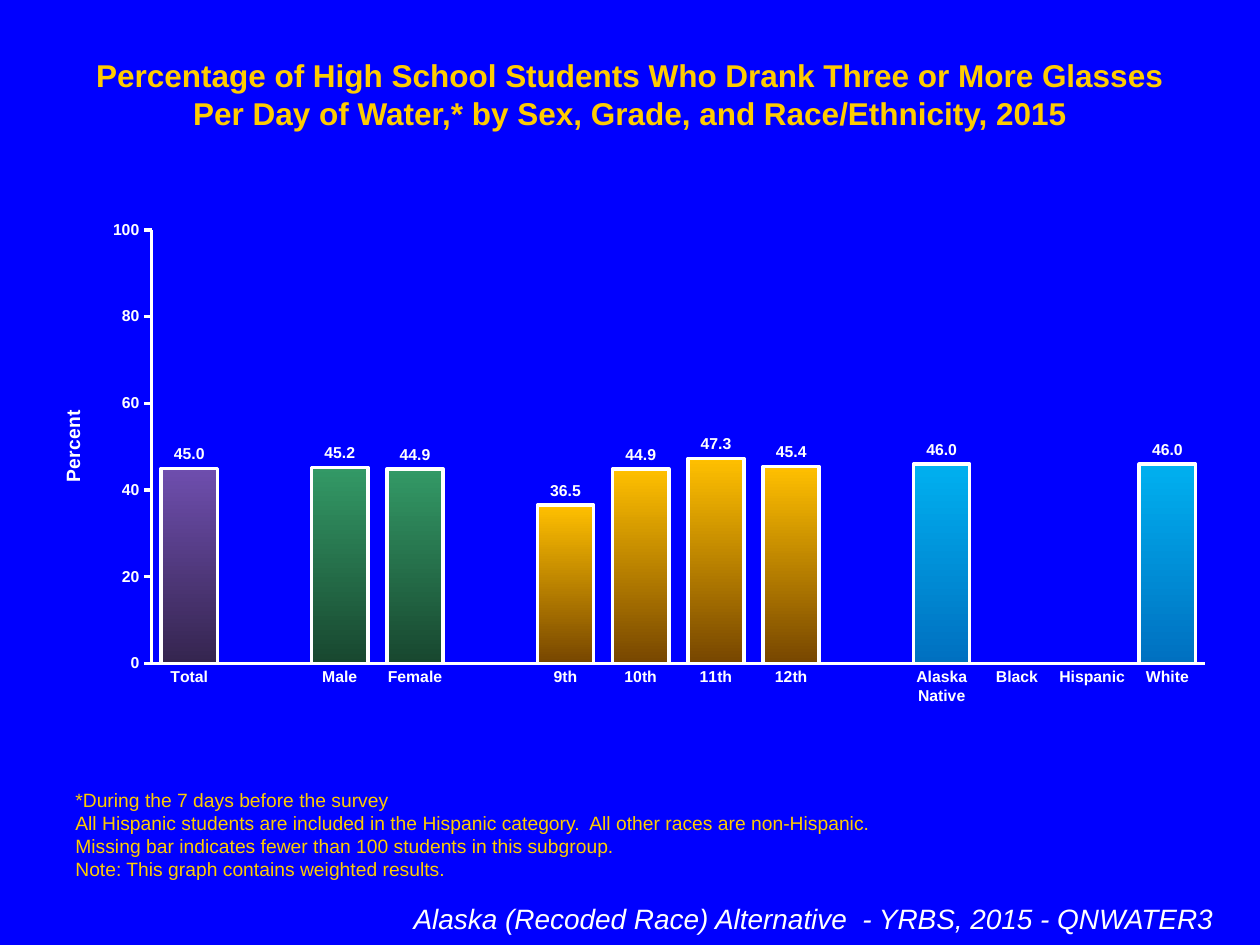
from lxml.etree import SubElement
from pptx import Presentation
from pptx.chart.data import CategoryChartData
from pptx.dml.color import RGBColor
from pptx.enum.chart import XL_CHART_TYPE, XL_LABEL_POSITION, XL_TICK_MARK
from pptx.enum.text import MSO_ANCHOR, MSO_AUTO_SIZE, PP_ALIGN
from pptx.oxml.ns import qn
from pptx.util import Pt

PX = 914400 / 126
FONT = "Arial"
COLORS = {
    "background": "0000FF",
    "gold": "FFCC00",
    "white": "FFFFFF",
    "total": ("6E4EAE", "35254F"),
    "sex": ("339966", "18472F"),
    "grade": ("FFC000", "774600"),
    "race": ("00B0F0", "0070C0"),
}
GROUPS = [
    ("total", [("Total", 45.0)]),
    ("sex", [("Male", 45.2), ("Female", 44.9)]),
    ("grade", [("9th", 36.5), ("10th", 44.9), ("11th", 47.3), ("12th", 45.4)]),
    ("race", [("Alaska Native", 46.0), ("Black", None), ("Hispanic", None), ("White", 46.0)]),
]
FOOTNOTES = [
    "*During the 7 days before the survey",
    "All Hispanic students are included in the Hispanic category.  All other races are non-Hispanic.",
    "Missing bar indicates fewer than 100 students in this subgroup.",
    "Note: This graph contains weighted results.",
]


def emu(box):
    return [round(length * PX) for length in box]


def rgb(value):
    return RGBColor.from_string(value)


def style_font(font, size, color, bold=False, italic=False):
    font.name = FONT
    font.size = Pt(size)
    font.bold = bold
    font.italic = italic
    font.color.rgb = rgb(COLORS[color])


def add_text(slide, box, lines, size, color, align=PP_ALIGN.LEFT,
             anchor=MSO_ANCHOR.TOP, bold=False, italic=False):
    frame = slide.shapes.add_textbox(*emu(box)).text_frame
    frame.word_wrap = True
    frame.auto_size = MSO_AUTO_SIZE.SHAPE_TO_FIT_TEXT
    frame.vertical_anchor = anchor
    for index, line in enumerate(lines):
        paragraph = frame.paragraphs[0] if index == 0 else frame.add_paragraph()
        paragraph.alignment = align
        run = paragraph.add_run()
        run.text = line
        style_font(run.font, size, color, bold, italic)


def set_layout(parent, index, **values):
    for old in parent.findall(qn("c:layout")):
        parent.remove(old)
    layout = SubElement(parent, qn("c:layout"))
    parent.insert(index, layout)
    manual = SubElement(layout, qn("c:manualLayout"))
    for tag, value in values.items():
        SubElement(manual, qn(f"c:{tag}")).set("val", str(value))


def style_axis(axis, tick_mark):
    axis.has_major_gridlines = False
    axis.major_tick_mark = tick_mark
    axis.minor_tick_mark = XL_TICK_MARK.NONE
    axis.format.line.color.rgb = rgb(COLORS["white"])
    axis.format.line.width = Pt(2)
    style_font(axis.tick_labels.font, 9, "white", bold=True)


def add_percent_chart(slide, box):
    bars = []
    for group, members in GROUPS:
        if bars:
            bars.append(("", None, None))
        bars += [(name, percent, group) for name, percent in members]

    data = CategoryChartData(number_format="#,##0.0")
    data.categories = [name for name, _, _ in bars]
    data.add_series("Series 1", [percent for _, percent, _ in bars])
    chart = slide.shapes.add_chart(XL_CHART_TYPE.COLUMN_CLUSTERED, *emu(box), data).chart
    chart.has_legend = False
    chart.has_title = False
    style_font(chart.font, 18, "white")

    style_axis(chart.category_axis, XL_TICK_MARK.NONE)
    percent_axis = chart.value_axis
    style_axis(percent_axis, XL_TICK_MARK.OUTSIDE)
    percent_axis.minimum_scale = 0
    percent_axis.maximum_scale = 100
    percent_axis.major_unit = 20
    percent_axis.tick_labels.number_format = "General"
    percent_axis.tick_labels.number_format_is_linked = False
    axis_title = percent_axis.axis_title
    title_run = axis_title.text_frame.paragraphs[0].add_run()
    title_run.text = "Percent"
    style_font(title_run.font, 11, "white", bold=True)
    set_layout(axis_title._element, 1, xMode="edge", yMode="edge", x=0.02, y=0.39)

    plot = chart.plots[0]
    plot.gap_width = 34
    plot.overlap = 100
    plot.vary_by_categories = False
    set_layout(plot._element.getparent(), 0, layoutTarget="inner",
               xMode="edge", yMode="edge", x=0.1, y=0.04, w=0.88, h=0.86)

    plot.has_data_labels = True
    labels = plot.data_labels
    labels.show_value = True
    labels.number_format = "#,##0.0"
    labels.number_format_is_linked = False
    labels.position = XL_LABEL_POSITION.OUTSIDE_END
    style_font(labels.font, 9, "white", bold=True)

    for index, (_, _, group) in enumerate(bars):
        if group is None:
            continue
        bar = plot.series[0].points[index].format
        bar.fill.gradient()
        bar.fill.gradient_angle = 270
        for stop, color in zip(bar.fill.gradient_stops, COLORS[group]):
            stop.color.rgb = rgb(color)
        bar.line.color.rgb = rgb(COLORS["white"])
        bar.line.width = Pt(2)


def build_slide(presentation):
    slide = presentation.slides.add_slide(presentation.slide_layouts[6])
    slide.background.fill.solid()
    slide.background.fill.fore_color.rgb = rgb(COLORS["background"])
    add_text(slide, (63, 50, 1134, 50),
             ["Percentage of High School Students Who Drank Three or More Glasses "
              "Per Day of Water,* by Sex, Grade, and Race/Ethnicity, 2015"],
             18, "gold", align=PP_ALIGN.CENTER, bold=True)
    add_text(slide, (63, 850, 1134, 37), FOOTNOTES, 11, "gold", anchor=MSO_ANCHOR.BOTTOM)
    add_text(slide, (116, 895, 1110, 47),
             ["Alaska (Recoded Race) Alternative  - YRBS, 2015 - QNWATER3"],
             16, "white", align=PP_ALIGN.RIGHT, italic=True)
    add_percent_chart(slide, (32, 210, 1197, 504))


def main():
    presentation = Presentation()
    presentation.slide_width, presentation.slide_height = emu((1260, 945))
    build_slide(presentation)
    presentation.save("out.pptx")


if __name__ == "__main__":
    main()
